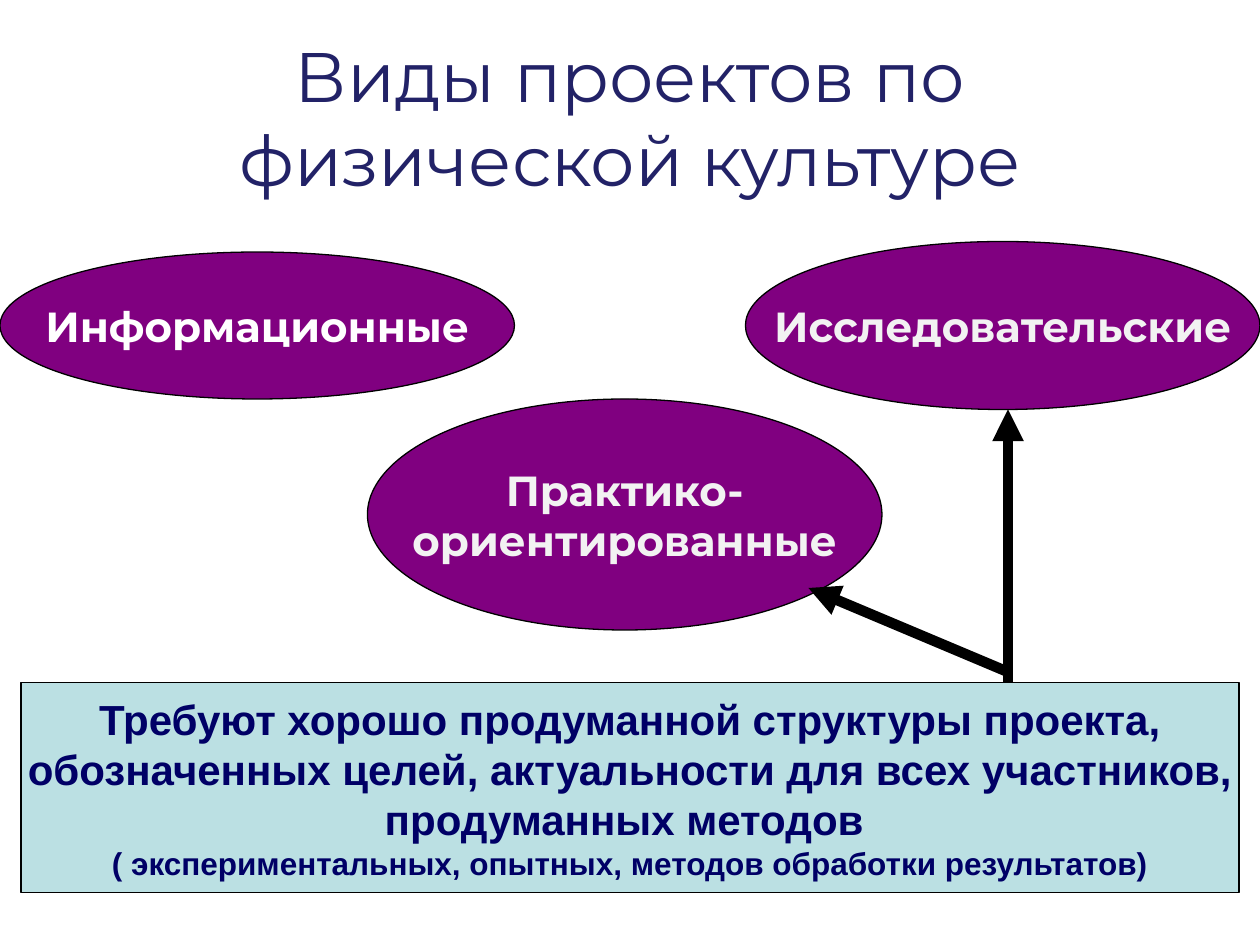
from lxml.etree import SubElement as Sub
from pptx import Presentation as Deck
from pptx.dml.color import RGBColor as Rgb
from pptx.enum.shapes import MSO_CONNECTOR as Link, MSO_SHAPE as Form
from pptx.enum.text import MSO_ANCHOR as Anchor, PP_ALIGN as Align
from pptx.oxml.ns import qn
from pptx.util import Inches, Pt

NAVY = Rgb(0x22, 0x22, 0x67)
INK = Rgb(0x00, 0x00, 0x66)
PLUM = Rgb(0x80, 0x00, 0x80)
AQUA = Rgb(0xBB, 0xE0, 0xE3)
BLACK = Rgb(0, 0, 0)
WHITE = Rgb(255, 255, 255)
PALE = Rgb(0xF2, 0xF2, 0xF2)


def write(frame, rows, size=24, font="Montserrat", color=PALE, bold=True, wrap=False):
    frame.word_wrap = wrap
    frame.vertical_anchor = Anchor.MIDDLE
    for num, row in enumerate(rows):
        para = frame.add_paragraph() if num else frame.paragraphs[0]
        para.alignment = Align.CENTER
        text, pts = row if isinstance(row, tuple) else (row, size)
        run = para.add_run()
        run.text = text
        run.font.name = font
        run.font.size = Pt(pts)
        run.font.bold = bold
        run.font.color.rgb = color


class Board:
    cols, rows = 120, 90
    edge, thick = Pt(0.75), Pt(6)

    def __init__(self, deck):
        self.deck = deck
        self.slide = deck.slides.add_slide(deck.slide_layouts[6])

    def grid(self, *cells):
        wide = self.deck.slide_width / self.cols
        high = self.deck.slide_height / self.rows
        return [round(cell * (high if num % 2 else wide)) for num, cell in enumerate(cells)]

    def title(self, text, *cells):
        box = self.slide.shapes.add_textbox(*self.grid(*cells))
        write(box.text_frame, [text], size=40, color=NAVY, bold=False, wrap=True)

    def block(self, form, fill, rows, *cells, **style):
        shape = self.slide.shapes.add_shape(form, *self.grid(*cells))
        shape.shadow.inherit = False
        shape.fill.solid()
        shape.fill.fore_color.rgb = fill
        shape.line.color.rgb = BLACK
        shape.line.width = self.edge
        write(shape.text_frame, rows, **style)

    def oval(self, rows, left, top, high, **style):
        self.block(Form.OVAL, PLUM, rows, left, top, 49, high, **style)

    def arrow(self, *cells):
        line = self.slide.shapes.add_connector(Link.STRAIGHT, *self.grid(*cells))
        line.line.color.rgb = BLACK
        line.line.width = self.thick
        Sub(line.line._get_or_add_ln(), qn("a:tailEnd"), type="triangle")
        Sub(line._element.spPr, qn("a:effectLst"))


def main():
    deck = Deck()
    deck.slide_width, deck.slide_height = Inches(10), Inches(7.5)
    board = Board(deck)
    board.title("Виды проектов по физической культуре", 6, 3.6, 108, 15)
    board.oval(["Информационные"], 0, 24, 14, color=WHITE)
    board.oval(["Исследовательские"], 71, 23, 16)
    board.oval(["Практико-", "ориентированные"], 35, 38, 22)
    needs = [
        "Требуют хорошо продуманной структуры проекта,",
        " обозначенных целей, актуальности для всех участников, ",
        "продуманных методов ",
        ("( экспериментальных, опытных, методов обработки результатов)", 18),
    ]
    board.block(Form.RECTANGLE, AQUA, needs, 2, 65, 116, 20, font="Arial", color=INK)
    board.arrow(96, 64, 77, 56)
    board.arrow(96, 65, 96, 39)
    deck.save("out.pptx")


if __name__ == "__main__":
    main()
